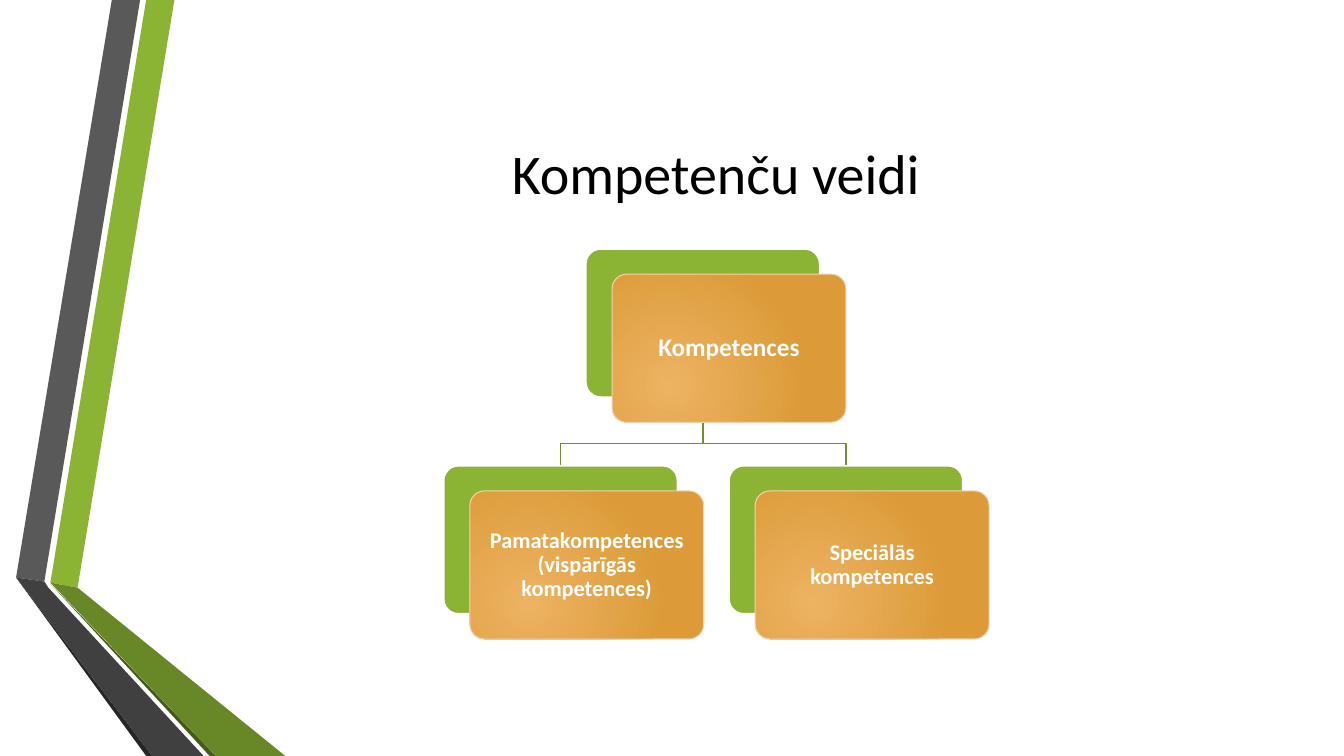
"""Build a slide with a two-level hierarchy of competence types."""
from dataclasses import dataclass

import lxml.etree
import pptx
import pptx.dml.color
import pptx.enum.shapes
import pptx.enum.text
import pptx.oxml
import pptx.oxml.ns
import pptx.shapes.autoshape
import pptx.shapes.base
import pptx.slide
import pptx.text.text
import pptx.util

RGBColor = pptx.dml.color.RGBColor
PX = 9144
SLIDE_W, SLIDE_H = 1333, 750
CARD_W, CARD_H = 232, 147
SHIFT_X, SHIFT_Y = 26, 25
INSET = 11
FONT = "Calibri"

BLACK = RGBColor(0x00, 0x00, 0x00)
WHITE = RGBColor(0xFF, 0xFF, 0xFF)
GREEN = RGBColor(0x8B, 0xB4, 0x34)
GREEN_MID = RGBColor(0x68, 0x87, 0x27)
GREEN_DARK = RGBColor(0x46, 0x5A, 0x1A)
GREEN_LINK = RGBColor(0x6F, 0x90, 0x2A)
GREY = RGBColor(0x59, 0x59, 0x59)
GREY_MID = RGBColor(0x40, 0x40, 0x40)
GREY_DARK = RGBColor(0x26, 0x26, 0x26)
ORANGE_LIGHT = RGBColor(0xED, 0xB3, 0x63)
ORANGE = RGBColor(0xDC, 0x9B, 0x38)
CARD_EDGE = RGBColor(0xF3, 0xD2, 0xB2)

Points = list[tuple[int, int]]


@dataclass(frozen=True)
class Band:
    """A filled polygon of the side decoration."""

    color: RGBColor
    points: Points


@dataclass(frozen=True)
class Node:
    """A card of the hierarchy, placed by the top centre of its backing."""

    text: str
    center: int
    top: int
    size: int


BANDS = [
    Band(GREEN, [(50, 578), (77, 583), (173, 0), (145, 0)]),
    Band(GREY, [(139, 0), (111, 0), (16, 573), (44, 577)]),
    Band(GREY_DARK, [(16, 573), (145, 750), (151, 750)]),
    Band(GREEN_DARK, [(50, 579), (208, 750), (214, 750)]),
    Band(GREEN_MID, [(50, 578), (214, 750), (283, 750), (77, 583)]),
    Band(GREY_MID, [(202, 750), (48, 583), (44, 577), (16, 573), (151, 750)]),
]
ROOT = Node("Kompetences", 697, 247, 18)
CHILDREN = [
    Node("Pamatakompetences (vispārīgās kompetences)", 556, 462, 16),
    Node("Speciālās kompetences", 839, 462, 16),
]


def px(*values: int) -> list[pptx.util.Emu]:
    """Convert px lengths to EMU."""
    return [pptx.util.Emu(v * PX) for v in values]


def write(tf: pptx.text.text.TextFrame, text: str, *, size: int, color: RGBColor,
          bold: bool = False, spacing: float = 1.0) -> None:
    """Put one centred paragraph in the middle of a text frame."""
    tf.word_wrap = True
    tf.vertical_anchor = pptx.enum.text.MSO_ANCHOR.MIDDLE
    p = tf.paragraphs[0]
    p.alignment = pptx.enum.text.PP_ALIGN.CENTER
    p.line_spacing = spacing
    r = p.add_run()
    r.text = text
    r.font.name = FONT
    r.font.size = pptx.util.Pt(size)
    r.font.bold = bold
    r.font.color.rgb = color


def draw_path(s: pptx.slide.Slide, points: Points, *,
              close: bool) -> pptx.shapes.autoshape.Shape:
    """Draw a freeform through points given in px."""
    builder = s.shapes.build_freeform(*points[0], scale=PX)
    builder.add_line_segments(points[1:], close=close)
    sp = builder.convert_to_shape()
    sp.shadow.inherit = False
    return sp


def draw_band(s: pptx.slide.Slide, band: Band) -> None:
    """Draw one polygon of the side decoration."""
    sp = draw_path(s, band.points, close=True)
    sp.fill.solid()
    sp.fill.fore_color.rgb = band.color
    sp.line.fill.background()


def draw_link(s: pptx.slide.Slide, parent: Node, child: Node) -> None:
    """Draw the bent line from a parent's backing to a child's."""
    bend = child.top - 22
    points = [(parent.center, parent.top + CARD_H), (parent.center, bend),
              (child.center, bend), (child.center, child.top)]
    sp = draw_path(s, points, close=False)
    sp.fill.background()
    sp.line.color.rgb = GREEN_LINK
    sp.line.width = pptx.util.Pt(1.25)


def draw_card(s: pptx.slide.Slide, left: int, top: int, *, edge: RGBColor,
              edge_pt: float) -> pptx.shapes.autoshape.Shape:
    """Draw a rounded card with an outline."""
    kind = pptx.enum.shapes.MSO_SHAPE.ROUNDED_RECTANGLE
    sp = s.shapes.add_shape(kind, *px(left, top, CARD_W, CARD_H))
    sp.adjustments[0] = 0.1
    sp.shadow.inherit = False
    sp.line.color.rgb = edge
    sp.line.width = pptx.util.Pt(edge_pt)
    return sp


def fill_radial(sp: pptx.shapes.autoshape.Shape, inner: RGBColor,
                outer: RGBColor) -> None:
    """Fill a shape with a circular gradient centred at its lower left."""
    sp.fill.gradient()
    for stop, color, position in zip(sp.fill.gradient_stops, (inner, outer), (0, 1)):
        stop.color.rgb = color
        stop.position = position
    qn = pptx.oxml.ns.qn
    lin = sp._element.spPr.find(f"{qn('a:gradFill')}/{qn('a:lin')}")
    circle = pptx.oxml.parse_xml(
        f'<a:path {pptx.oxml.ns.nsdecls("a")} path="circle">'
        '<a:fillToRect l="50000" t="100000" r="100000" b="50000"/></a:path>')
    lin.getparent().replace(lin, circle)


def draw_node(s: pptx.slide.Slide, node: Node) -> None:
    """Draw a green backing and the labelled card in front of it."""
    left = node.center - CARD_W // 2
    back = draw_card(s, left, node.top, edge=WHITE, edge_pt=1.25)
    back.fill.solid()
    back.fill.fore_color.rgb = GREEN
    front = draw_card(s, left + SHIFT_X, node.top + SHIFT_Y, edge=CARD_EDGE, edge_pt=0.75)
    fill_radial(front, ORANGE_LIGHT, ORANGE)
    tf = front.text_frame
    tf.margin_left, tf.margin_top, tf.margin_right, tf.margin_bottom = px(*[INSET] * 4)
    write(tf, node.text, size=node.size, color=WHITE, bold=True, spacing=0.9)


def main() -> None:
    """Build and save the slide."""
    prs = pptx.Presentation()
    prs.slide_width, prs.slide_height = px(SLIDE_W, SLIDE_H)
    s = prs.slides.add_slide(prs.slide_layouts[6])
    for band in BANDS:
        draw_band(s, band)
    title = s.shapes.add_textbox(*px(162, 75, 1096, 192))
    write(title.text_frame, "Kompetenču veidi", size=40, color=BLACK)
    for child in CHILDREN:
        draw_link(s, ROOT, child)
    for node in [ROOT, *CHILDREN]:
        draw_node(s, node)
    prs.save("out.pptx")


if __name__ == "__main__":
    main()
